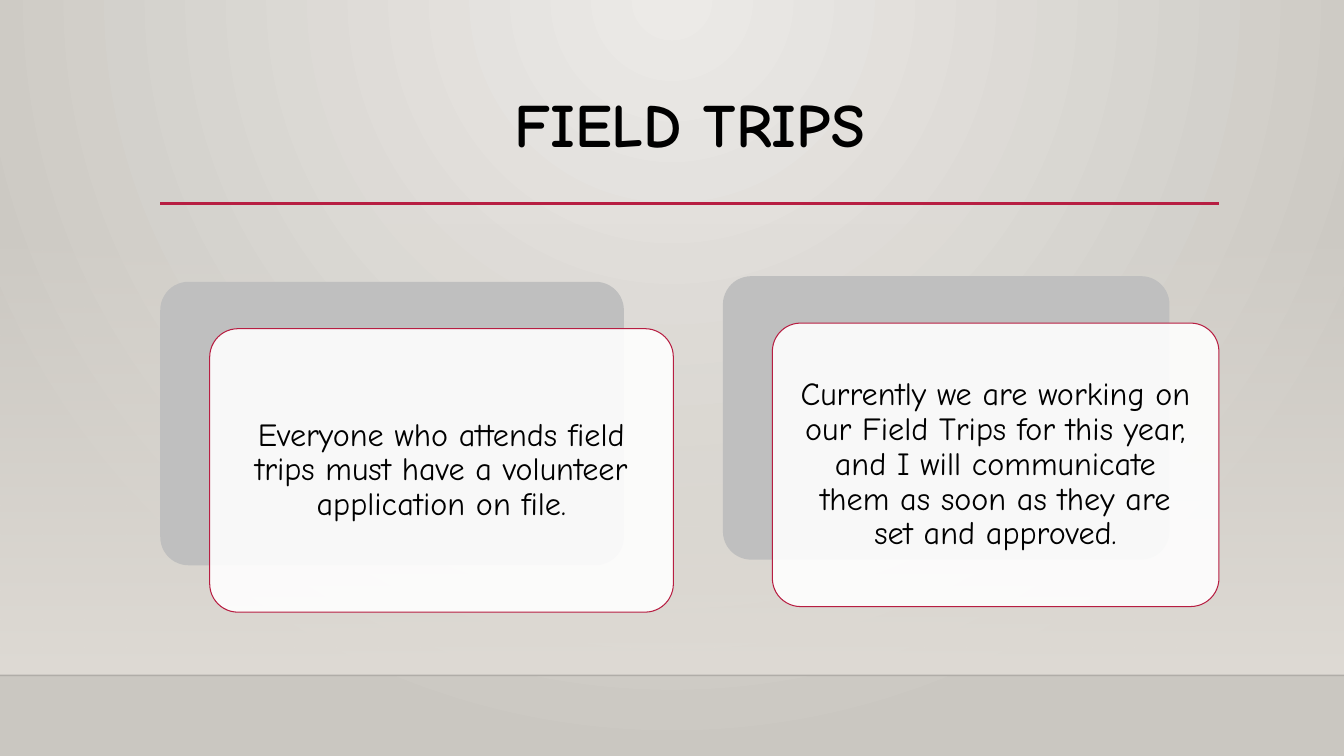
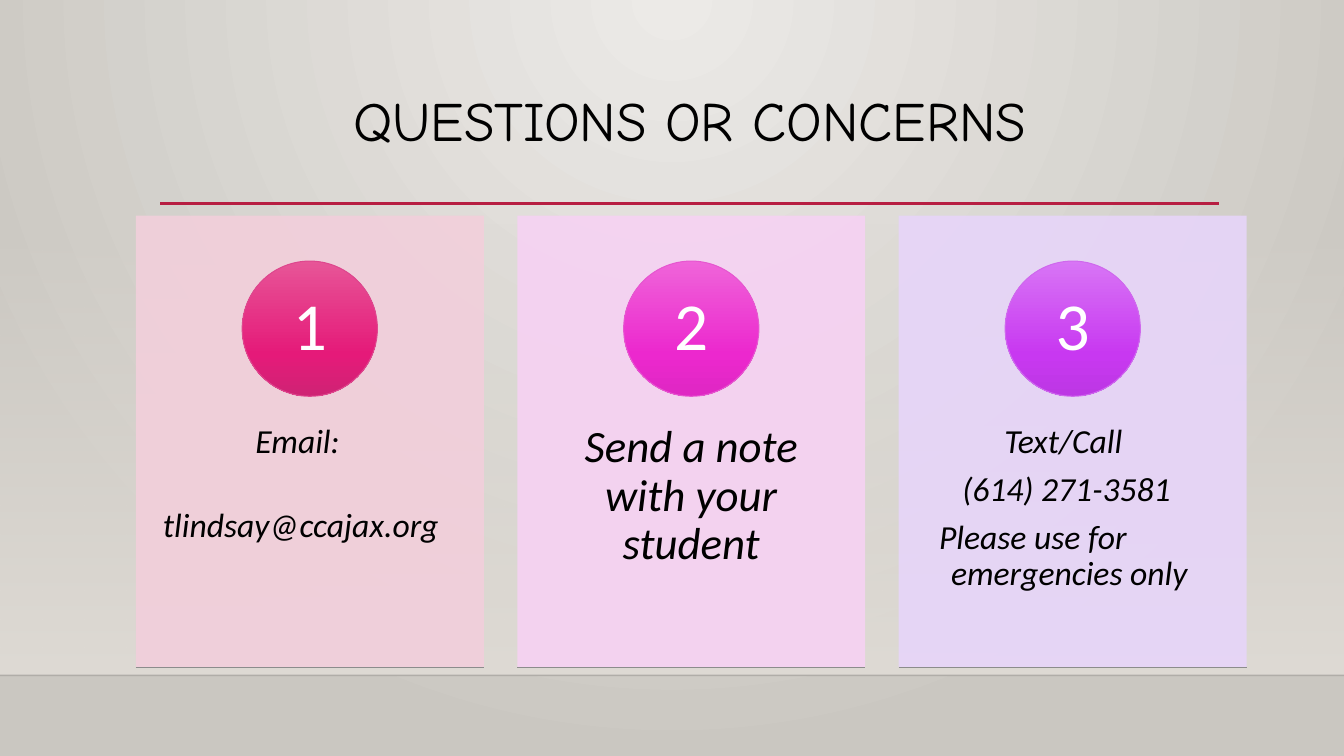
import pptx
import pptx.util
import pptx.dml.color
import pptx.enum.shapes
import pptx.enum.text
import pptx.oxml
import pptx.oxml.ns

Pt = pptx.util.Pt
RGB = pptx.dml.color.RGBColor
SHAPE = pptx.enum.shapes.MSO_SHAPE
ALIGN = pptx.enum.text.PP_ALIGN
ANCHOR = pptx.enum.text.MSO_ANCHOR
qn = pptx.oxml.ns.qn

BLACK = RGB(0x00, 0x00, 0x00)
WHITE = RGB(0xFF, 0xFF, 0xFF)
CRIMSON = RGB(0xB7, 0x1E, 0x42)
GREY = RGB(0xBF, 0xBF, 0xBF)
EDGE_GREY = RGB(0x8C, 0x8C, 0x8C)
SAND = RGB(0xDF, 0xDB, 0xD5)
PALE = RGB(0xEC, 0xEA, 0xE7)
STONE = RGB(0xCA, 0xC7, 0xC1)
ROSE = RGB(0xF2, 0xCF, 0xDB)
ORCHID = RGB(0xF6, 0xD2, 0xF3)
LILAC = RGB(0xE7, 0xD5, 0xF9)
ROSE_BADGE = (RGB(0xE7, 0x55, 0x97), RGB(0xE5, 0x1A, 0x79), RGB(0xCF, 0x23, 0x74))
ORCHID_BADGE = (RGB(0xEF, 0x64, 0xD9), RGB(0xEC, 0x28, 0xCE), RGB(0xDF, 0x27, 0xC3))
LILAC_BADGE = (RGB(0xD8, 0x75, 0xF5), RGB(0xC8, 0x38, 0xF1), RGB(0xBD, 0x37, 0xE4))
ROSE_RING = RGB(0xDE, 0x47, 0x8E)
ORCHID_RING = RGB(0xE6, 0x57, 0xD0)
LILAC_RING = RGB(0xCF, 0x69, 0xED)

HEADING_FONT = "Comic Neue"
BODY_FONT = "Calibri"
WIDTH, HEIGHT = 960, 540
LEFT, RIGHT = 114.5, 871
HORIZON = 482.4

LINEAR = '<a:lin ang="5400000" scaled="0"/>'
RADIAL = '<a:path path="circle"><a:fillToRect l="43000" r="43000" b="100000"/></a:path>'


def set_gradient(parent, stops, direction):
    gradient = parent.find(".//" + qn("a:gradFill"))
    marks = "".join(
        f'<a:gs pos="{position * 1000}"><a:srgbClr val="{color}">'
        f'<a:alpha val="{opacity * 1000}"/></a:srgbClr></a:gs>'
        for position, color, opacity in stops)
    filled = pptx.oxml.parse_xml(
        f'<a:gradFill {pptx.oxml.ns.nsdecls("a")} rotWithShape="1">'
        f'<a:gsLst>{marks}</a:gsLst>{direction}</a:gradFill>')
    gradient.getparent().replace(gradient, filled)


def set_opacity(parent, percent):
    color = parent.find(qn("a:solidFill")).find(qn("a:srgbClr"))
    color.append(pptx.oxml.parse_xml(
        f'<a:alpha {pptx.oxml.ns.nsdecls("a")} val="{percent * 1000}"/>'))


class Deck:
    def __init__(self):
        self.presentation = pptx.Presentation()
        self.presentation.slide_width = Pt(WIDTH)
        self.presentation.slide_height = Pt(HEIGHT)
        master = self.presentation.slide_master
        master.background.fill.gradient()
        set_gradient(master.element, [(0, PALE, 100), (100, STONE, 100)], RADIAL)
        self.slide = None

    def start_slide(self, heading, size, bold=False):
        self.slide = self.presentation.slides.add_slide(self.presentation.slide_layouts[5])
        title = self.slide.shapes.title
        title.left, title.top = Pt(LEFT), Pt(63.4)
        title.width, title.height = Pt(RIGHT - LEFT), Pt(82.8)
        self.set_text(title, [(heading, {})], HEADING_FONT, size, anchor=ANCHOR.TOP, bold=bold)
        band = self.shape(SHAPE.RECTANGLE, 0, 159, WIDTH, HORIZON - 159)
        band.fill.gradient()
        set_gradient(band.element.spPr, [(0, SAND, 0), (100, SAND, 100)], LINEAR)
        self.line(0, WIDTH, HORIZON, BLACK, 1, 20)
        self.line(LEFT, RIGHT, 145.4, CRIMSON, 2.5)

    def shape(self, kind, left, top, width, height, fill=None, opacity=100, outline=None):
        shape = self.slide.shapes.add_shape(kind, Pt(left), Pt(top), Pt(width), Pt(height))
        shape.shadow.inherit = False
        if fill is not None:
            shape.fill.solid()
            shape.fill.fore_color.rgb = fill
            set_opacity(shape.element.spPr, opacity)
        if outline is None:
            shape.line.fill.background()
        else:
            shape.line.color.rgb = outline
            shape.line.width = Pt(0.75)
        return shape

    def line(self, start, end, top, color, weight, opacity=100):
        line = self.slide.shapes.add_connector(
            pptx.enum.shapes.MSO_CONNECTOR.STRAIGHT, Pt(start), Pt(top), Pt(end), Pt(top))
        line.line.color.rgb = color
        line.line.width = Pt(weight)
        properties = line.element.spPr
        set_opacity(properties.find(qn("a:ln")), opacity)
        properties.append(pptx.oxml.parse_xml(
            f'<a:effectLst {pptx.oxml.ns.nsdecls("a")}/>'))

    def set_text(self, shape, paragraphs, font, size, color=BLACK, anchor=ANCHOR.MIDDLE,
                 margins=(7.2, 3.6), bold=False, italic=False):
        frame = shape.text_frame
        frame.word_wrap = True
        frame.auto_size = pptx.enum.text.MSO_AUTO_SIZE.NONE
        frame.vertical_anchor = anchor
        frame.margin_left = frame.margin_right = Pt(margins[0])
        frame.margin_top, frame.margin_bottom = Pt(margins[1]), Pt(3.6)
        for index, (text, layout) in enumerate(paragraphs):
            paragraph = frame.paragraphs[0] if index == 0 else frame.add_paragraph()
            paragraph.text = text
            paragraph.line_spacing = 0.9
            paragraph.space_before = Pt(layout.get("before", 0))
            paragraph.alignment = ALIGN.CENTER
            if "indent" in layout:
                paragraph.alignment = ALIGN.LEFT
                properties = paragraph._p.get_or_add_pPr()
                properties.set("marL", str(Pt(layout["indent"])))
                properties.set("indent", str(Pt(layout.get("first", 0))))
            paragraph.font.name = font
            paragraph.font.size = Pt(size)
            paragraph.font.bold = bold
            paragraph.font.italic = italic
            paragraph.font.color.rgb = color

    def layered_note(self, left, top, width, text):
        height = 202.5
        back = self.shape(SHAPE.ROUNDED_RECTANGLE, left, top, width, height, GREY)
        front = self.shape(SHAPE.ROUNDED_RECTANGLE, left + 35.3, top + 33.5, width, height,
                           WHITE, 90, CRIMSON)
        for layer in (back, front):
            layer.adjustments[0] = 0.1
        self.set_text(front, [(text, {})], HEADING_FONT, 23, margins=(13, 3.6))

    def contact_card(self, left, number, tint, badge_colors, ring, size, paragraphs):
        top, width, height, diameter = 154, 248.6, 322.6, 96.6
        panel = self.shape(SHAPE.RECTANGLE, left, top, width, height, tint, 90)
        self.set_text(panel, paragraphs, BODY_FONT, size, anchor=ANCHOR.TOP,
                      margins=(19.4, 149), italic=True)
        badge = self.shape(SHAPE.OVAL, left + (width - diameter) / 2, top + 32.5,
                           diameter, diameter, outline=ring)
        badge.fill.gradient()
        stops = [(position, color, 100) for position, color in zip((0, 69, 100), badge_colors)]
        set_gradient(badge.element.spPr, stops, LINEAR)
        self.set_text(badge, [(str(number), {})], BODY_FONT, 48, WHITE)
        self.line(left, left + width, top + height, EDGE_GREY, 0.75)


def main():
    deck = Deck()

    deck.start_slide("FIELD TRIPS", 44, bold=True)
    deck.layered_note(114.5, 201.3, 331.2,
                      "Everyone who attends field trips must have a volunteer application on file.")
    deck.layered_note(516.4, 197.3, 319,
                      "Currently we are working on our Field Trips for this year, and I will "
                      "communicate them as soon as they are set and approved.")

    deck.start_slide("QUESTIONS OR CONCERNS", 39.6)
    contacts = [
        (ROSE, ROSE_BADGE, ROSE_RING, 24, [
            ("Email:", {"indent": 66}),
            ("tlindsay@ccajax.org", {"indent": 0, "before": 34})]),
        (ORCHID, ORCHID_BADGE, ORCHID_RING, 32, [
            ("Send a note with your student", {})]),
        (LILAC, LILAC_BADGE, LILAC_RING, 24, [
            ("Text/Call", {"indent": 56}),
            ("(614) 271-3581", {"indent": 26, "before": 8.4}),
            ("Please use for emergencies only",
             {"indent": 18, "first": -8.6, "before": 8.4})]),
    ]
    for index, contact in enumerate(contacts):
        deck.contact_card(97 + index * 272.5, index + 1, *contact)

    deck.presentation.save("out.pptx")


if __name__ == "__main__":
    main()
